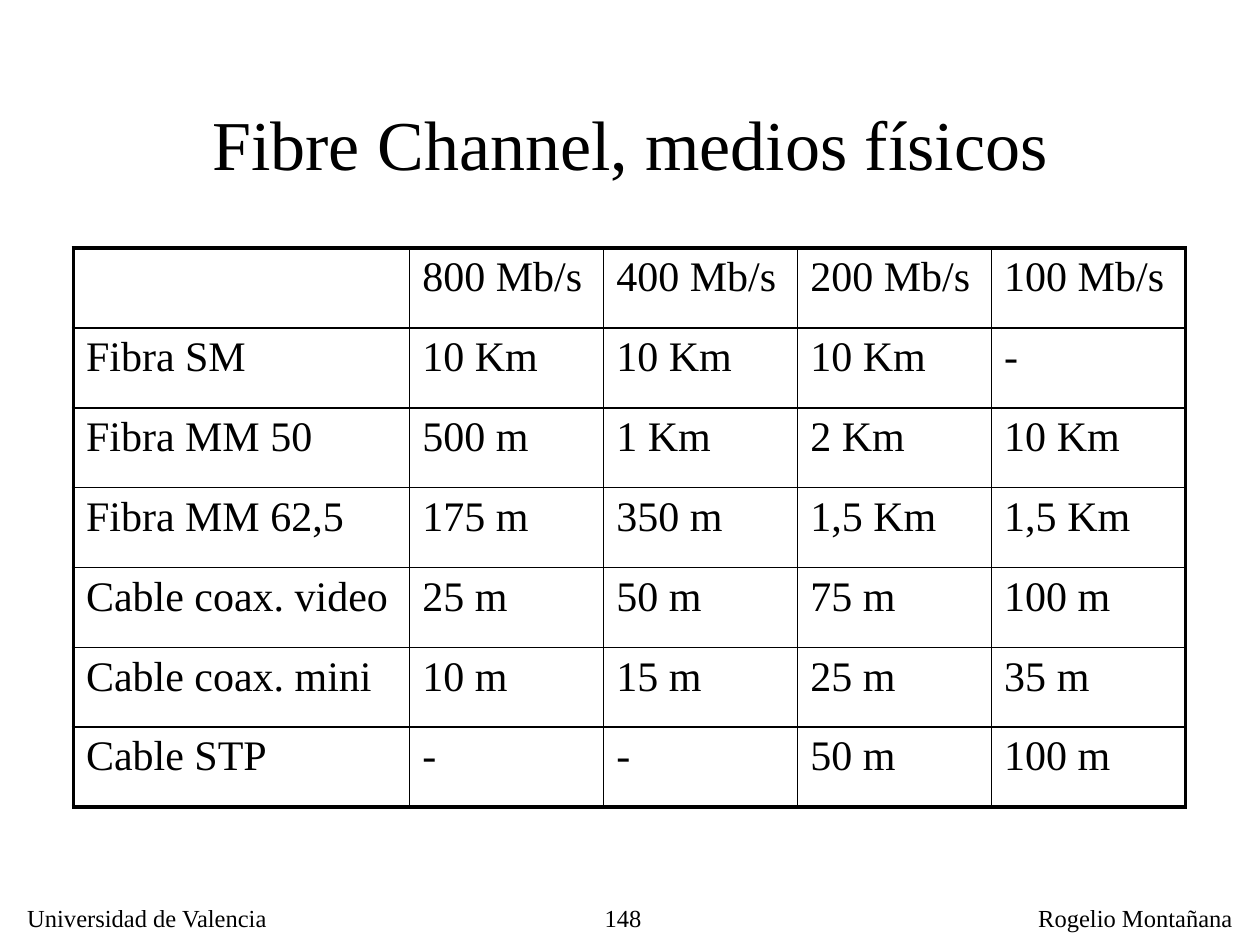
from dataclasses import dataclass

from lxml.etree import SubElement
from pptx import Presentation
from pptx.dml.color import RGBColor
from pptx.enum.text import MSO_ANCHOR as Anchor, PP_ALIGN as Align
from pptx.oxml.ns import qn
from pptx.util import Cm, Pt


@dataclass(frozen=True)
class Theme:
    font: str = "Times New Roman"
    ink: str = "000000"
    title_size: int = 40
    table_size: int = 24
    footer_size: int = 14
    outer_line: float = 2.25
    inner_line: float = 1


THEME = Theme()

TITLE = "Fibre Channel, medios físicos"
MEDIA_RANGES = [
    ("", "800 Mb/s", "400 Mb/s", "200 Mb/s", "100 Mb/s"),
    ("Fibra SM", "10 Km", "10 Km", "10 Km", "-"),
    ("Fibra MM 50", "500 m", "1 Km", "2 Km", "10 Km"),
    ("Fibra MM 62,5", "175 m", "350 m", "1,5 Km", "1,5 Km"),
    ("Cable coax. video", "25 m", "50 m", "75 m", "100 m"),
    ("Cable coax. mini", "10 m", "15 m", "25 m", "35 m"),
    ("Cable STP", "-", "-", "50 m", "100 m"),
]
FOOTER = [
    ("148", 10.49, 2.69, Align.RIGHT, True),
    ("Universidad de Valencia", 0.3, 5.41, Align.LEFT, False),
    ("Rogelio Montañana", 20.68, 4.42, Align.LEFT, False),
]
FOOTER_TOP, FOOTER_HEIGHT = 18.08, 0.84
TABLE_LEFT, TABLE_TOP = 1.48, 5
MEDIUM_WIDTH, RATE_WIDTH, ROW_HEIGHT = 6.78, 3.91, 1.61


def style(paragraph, size, align=Align.LEFT):
    paragraph.alignment = align
    for run in paragraph.runs:
        run.font.name = THEME.font
        run.font.size = Pt(size)
        run.font.color.rgb = RGBColor.from_string(THEME.ink)


def add_text(slide, text, left, top, width, height, size, align, wrap=True, anchor=Anchor.TOP):
    frame = slide.shapes.add_textbox(Cm(left), Cm(top), Cm(width), Cm(height)).text_frame
    frame.text = text
    frame.word_wrap = wrap
    frame.vertical_anchor = anchor
    style(frame.paragraphs[0], size, align)


def draw_borders(cell, outer_edges):
    properties = cell._tc.get_or_add_tcPr()
    for side, is_outer in outer_edges.items():
        points = THEME.outer_line if is_outer else THEME.inner_line
        border = SubElement(properties, qn(f"a:ln{side}"), w=str(Pt(points)))
        fill = SubElement(border, qn("a:solidFill"))
        SubElement(fill, qn("a:srgbClr"), val=THEME.ink)


def add_ranges(slide):
    row_count, column_count = len(MEDIA_RANGES), len(MEDIA_RANGES[0])
    widths = [MEDIUM_WIDTH] + [RATE_WIDTH] * (column_count - 1)
    ranges = slide.shapes.add_table(
        row_count, column_count, Cm(TABLE_LEFT), Cm(TABLE_TOP),
        Cm(sum(widths)), Cm(ROW_HEIGHT * row_count),
    ).table
    ranges.first_row = ranges.horz_banding = False
    for column, width in zip(ranges.columns, widths):
        column.width = Cm(width)
    for r, medium in enumerate(MEDIA_RANGES):
        ranges.rows[r].height = Cm(ROW_HEIGHT)
        for c, text in enumerate(medium):
            cell = ranges.cell(r, c)
            cell.text = text
            style(cell.text_frame.paragraphs[0], THEME.table_size)
            draw_borders(cell, {
                "L": c == 0, "R": c == column_count - 1,
                "T": r == 0, "B": r == row_count - 1,
            })
            cell.fill.background()


def main():
    deck = Presentation()
    deck.slide_width, deck.slide_height = Cm(25.4), Cm(19.05)
    slide = deck.slides.add_slide(deck.slide_layouts[6])
    for text, left, width, align, wrap in FOOTER:
        add_text(slide, text, left, FOOTER_TOP, width, FOOTER_HEIGHT,
                 THEME.footer_size, align, wrap)
    add_text(slide, TITLE, 1.9, 1.7, 21.6, 2.34, THEME.title_size,
             Align.CENTER, anchor=Anchor.MIDDLE)
    add_ranges(slide)
    deck.save("out.pptx")


if __name__ == "__main__":
    main()
